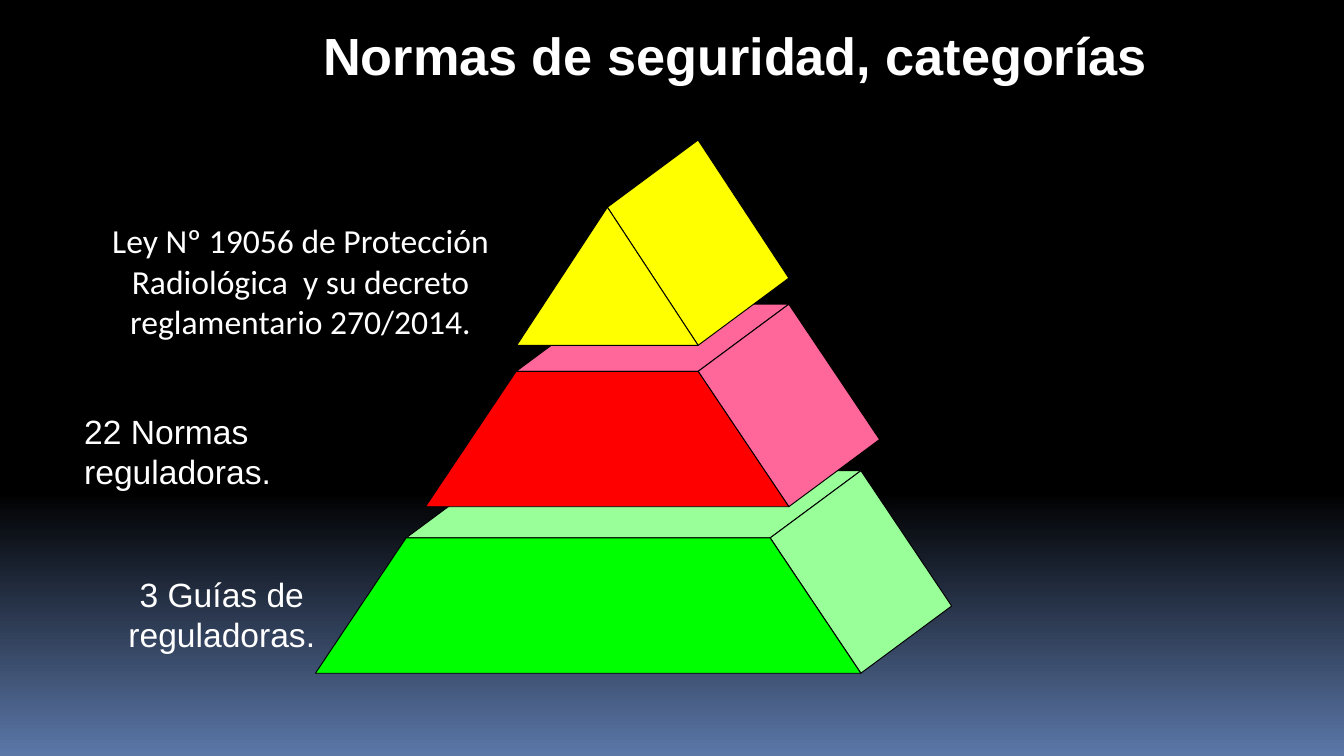
from dataclasses import dataclass

from pptx import Presentation
from pptx.dml.color import RGBColor
from pptx.enum import text as tx
from pptx.util import Pt


@dataclass(frozen=True)
class Theme:
    font: str = "Arial"
    alt: str = "Calibri"
    head: int = 28
    body: int = 18
    ink: str = "FFFFFF"
    edge: str = "000000"
    dark: str = "000000"
    glow: str = "5B77A8"
    green: tuple = ("00FF00", "99FF99")  # front, side
    red: tuple = ("FF0000", "FF6699")
    gold: tuple = ("FFFF00", "FFFF00")


def rgb(code):
    return RGBColor.from_string(code)


class Deck:
    slope = 48.6  # run of each slanted side
    depth = (48.6, -36)  # shift from front edge to back edge

    def __init__(self, theme):
        self.theme = theme
        self.prs = Presentation()
        self.prs.slide_width, self.prs.slide_height = Pt(720), Pt(405)
        self.slide = self.prs.slides.add_slide(self.prs.slide_layouts[5])

    def backdrop(self):
        fill = self.slide.background.fill
        fill.gradient()
        fill.gradient_angle = 270
        stops = ((0.65, self.theme.dark), (1, self.theme.glow))
        for stop, (pos, code) in zip(fill.gradient_stops, stops):
            stop.position = pos
            stop.color.rgb = rgb(code)

    def style(self, shape, words, size, align, bold=False, font=None):
        frame = shape.text_frame
        frame.word_wrap = True
        frame.auto_size = tx.MSO_AUTO_SIZE.NONE
        frame.margin_left = frame.margin_right = Pt(7.2)
        frame.margin_top = frame.margin_bottom = Pt(3.6)
        frame.text = words
        para = frame.paragraphs[0]
        para.alignment = align
        para.font.name = font or self.theme.font
        para.font.size = Pt(size)
        para.font.bold = bold
        para.font.color.rgb = rgb(self.theme.ink)

    def title(self, words, *box):
        shape = self.slide.shapes.title
        shape.left, shape.top, shape.width, shape.height = map(Pt, box)
        self.style(shape, words, self.theme.head, tx.PP_ALIGN.CENTER, True)
        shape.text_frame.vertical_anchor = tx.MSO_ANCHOR.MIDDLE

    def label(self, words, *box, align=tx.PP_ALIGN.CENTER, font=None):
        shape = self.slide.shapes.add_textbox(*map(Pt, box))
        self.style(shape, words, self.theme.body, align, font=font)

    def face(self, points, code):
        first, *rest = [(Pt(x), Pt(y)) for x, y in points]
        outline = self.slide.shapes.build_freeform(*first)
        outline.add_line_segments(rest, close=True)
        shape = outline.convert_to_shape()
        shape.shadow.inherit = False
        shape.fill.solid()
        shape.fill.fore_color.rgb = rgb(code)
        shape.line.color.rgb = rgb(self.theme.edge)
        shape.line.width = Pt(0.5)

    def tier(self, left, top, width, height, tones):
        """Draw a slanted block; a top edge of zero width gives the peak."""
        front, side = tones
        right, base = left + width, top + height
        dx, dy = self.depth
        a, b = (left, top), (right, top)
        c, d = (right + self.slope, base), (left - self.slope, base)
        back = [(x + dx, y + dy) for x, y in (a, b, c)]
        if width:
            self.face([a, b, back[1], back[0]], side)
        self.face([b, c, back[2], back[1]], side)
        self.face([a, b, c, d] if width else [a, c, d], front)


def main():
    theme = Theme()
    deck = Deck(theme)
    deck.backdrop()
    deck.title("Normas de seguridad, categorías", 82, 2.5, 623.5, 53)

    # Pyramid, from base to peak
    deck.tier(217.6, 288.2, 195, 72.5, theme.green)
    deck.tier(276.5, 199, 97.5, 72.5, theme.red)
    deck.tier(325.4, 111, 0, 74, theme.gold)

    # Labels, from peak to base
    deck.label("Ley Nº 19056 de Protección Radiológica  y su decreto "
               "reglamentario 270/2014.", 19.3, 114.5, 283.5, 72,
               font=theme.alt)
    deck.label("22 Normas\vreguladoras.", 38, 216.7, 207, 50,
               align=tx.PP_ALIGN.LEFT)
    deck.label("3 Guías de\vreguladoras.", 15.3, 304, 207, 50)

    deck.prs.save("out.pptx")


if __name__ == "__main__":
    main()
